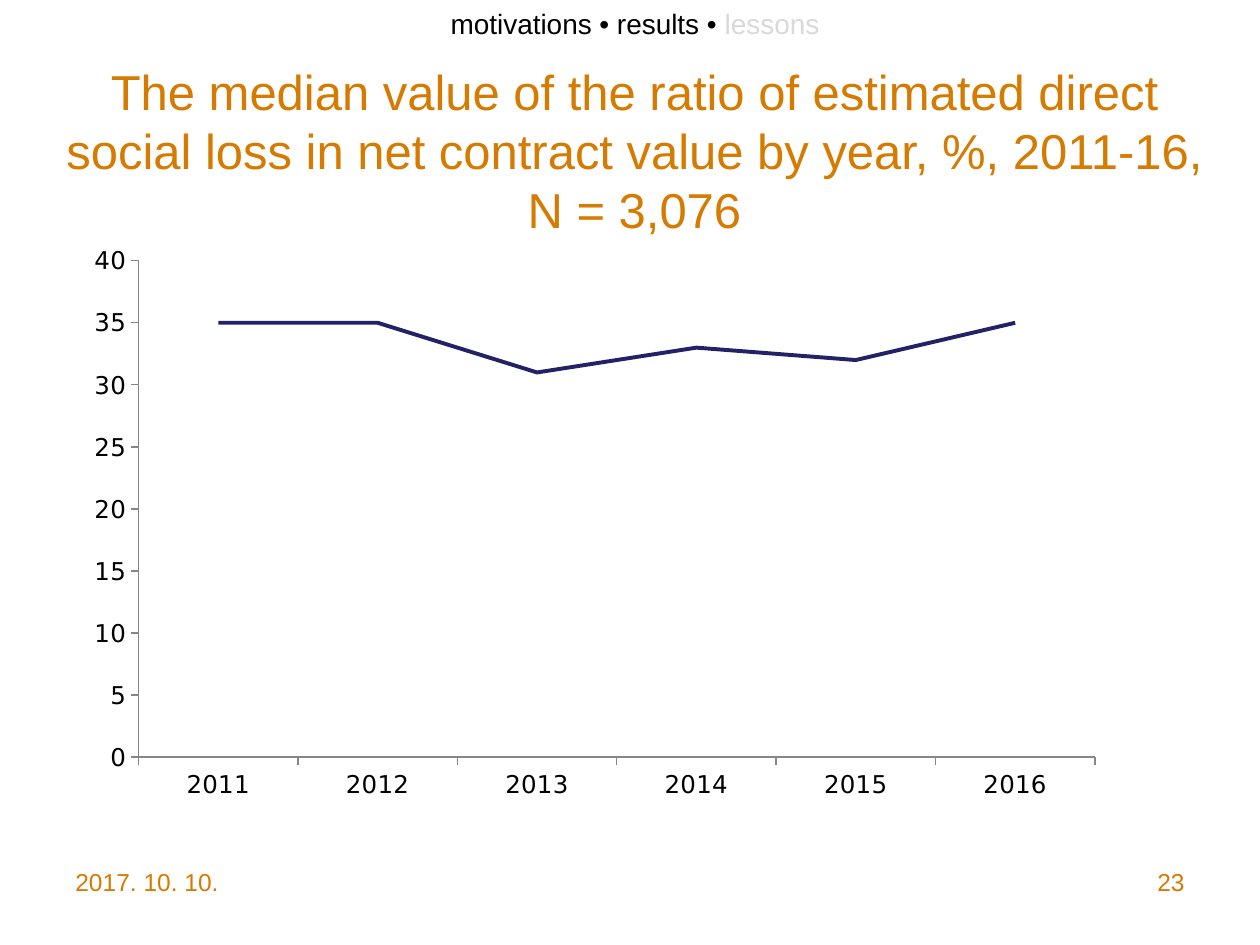
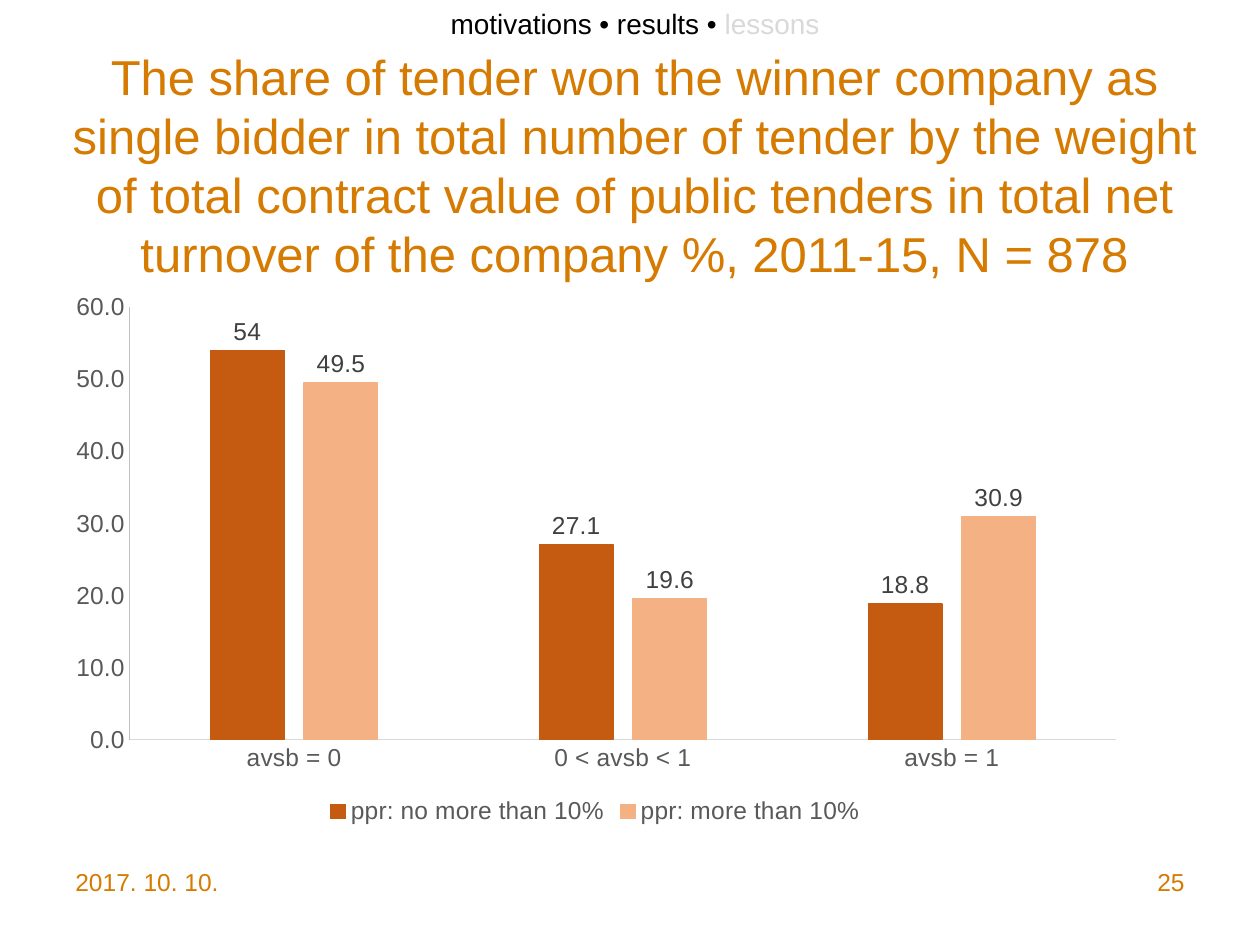
from lxml import etree
from pptx import Presentation
from pptx.chart.data import CategoryChartData
from pptx.dml.color import RGBColor
from pptx.enum.chart import XL_CHART_TYPE, XL_LABEL_POSITION, XL_LEGEND_POSITION, XL_TICK_MARK
from pptx.enum.text import MSO_ANCHOR, MSO_AUTO_SIZE, PP_ALIGN
from pptx.oxml.ns import qn
from pptx.util import Inches, Pt

C = {"title": "D67B01", "text": "000000", "faded": "D9D9D9", "line": "222267",
     "axis": "868686", "value_axis": "BFBFBF", "axis_text": "595959",
     "label": "404040", "dark": "C55A11", "light": "F4B183"}


def add_text(tf, runs, size, align):
    tf.word_wrap = True
    p = tf.paragraphs[0]
    p.alignment = align
    for text, color in runs:
        r = p.add_run()
        r.text = text
        r.font.name = "Arial"
        r.font.size = Pt(size)
        r.font.color.rgb = RGBColor.from_string(C[color])


def style_font(font, name, color):
    font.name = name
    font.size = Pt(14)
    font.bold = False
    font.color.rgb = RGBColor.from_string(C[color])


slides = [
    dict(title="The median value of the ratio of estimated direct social loss in net "
               "contract value by year, %, 2011-16, N = 3,076",
         title_height=1.5, number="23", kind=XL_CHART_TYPE.LINE,
         at=(0.59, 1.87, 8.27, 4.56), plot=(1.1, 2.07, 7.59, 3.94),
         cats=["2011", "2012", "2013", "2014", "2015", "2016"],
         series=[("Series 1", [35, 35, 31, 33, 32, 35])],
         font="DejaVu Sans", color="text", tick=XL_TICK_MARK.OUTSIDE,
         axis_lines=("axis", "axis"), top=40, step=5, fmt="#,##0"),
    dict(title="The share of tender won the winner company as single bidder in total number "
               "of tender by the weight of total contract value of public tenders in total "
               "net turnover of the company %, 2011-15, N = 878",
         title_height=1.73, number="25", kind=XL_CHART_TYPE.COLUMN_CLUSTERED,
         at=(0.43, 2.25, 8.59, 4.34), plot=(1.03, 2.44, 7.83, 3.43),
         cats=["avsb = 0", "0 < avsb < 1", "avsb = 1"],
         series=[("ppr: no more than 10%", [54, 27.1, 18.8]),
                 ("ppr: more than 10%", [49.5, 19.6, 30.9])],
         font="Arial", color="axis_text", tick=XL_TICK_MARK.NONE,
         axis_lines=("faded", "value_axis"), top=60, step=10, fmt="0.0"),
]

prs = Presentation()
prs.slide_width, prs.slide_height = Inches(10), Inches(7.5)

for d in slides:
    s = prs.slides.add_slide(prs.slide_layouts[5])
    title = s.shapes.title
    title.left, title.top = Inches(0.27), Inches(0.44)
    title.width, title.height = Inches(9.53), Inches(d["title_height"])
    title.text_frame.auto_size = MSO_AUTO_SIZE.NONE
    title.text_frame.vertical_anchor = MSO_ANCHOR.MIDDLE
    add_text(title.text_frame, [(d["title"], "title")], 28, PP_ALIGN.CENTER)

    for at, runs, size, align in [
        ((0.5, 6.83, 2.33, 0.52), [("2017. 10. 10.", "title")], 14, PP_ALIGN.LEFT),
        ((7.17, 6.83, 2.33, 0.52), [(d["number"], "title")], 14, PP_ALIGN.RIGHT),
        ((0.04, 0, 10, 0.37), [("motivations • results • ", "text"), ("lessons", "faded")],
         16, PP_ALIGN.CENTER),
    ]:
        sp = s.shapes.add_textbox(*map(Inches, at))
        add_text(sp.text_frame, runs, size, align)

    data = CategoryChartData()
    data.categories = d["cats"]
    for name, values in d["series"]:
        data.add_series(name, values)
    chart = s.shapes.add_chart(d["kind"], *map(Inches, d["at"]), data).chart
    chart.has_title = False
    chart.has_legend = len(d["series"]) > 1
    style_font(chart.font, d["font"], "text")

    for axis, color in zip((chart.category_axis, chart.value_axis), d["axis_lines"]):
        axis.has_major_gridlines = False
        axis.major_tick_mark = d["tick"]
        axis.minor_tick_mark = XL_TICK_MARK.NONE
        axis.format.line.color.rgb = RGBColor.from_string(C[color])
        axis.format.line.width = Pt(0.75)
        style_font(axis.tick_labels.font, d["font"], d["color"])
    axis = chart.value_axis
    axis.minimum_scale, axis.maximum_scale, axis.major_unit = 0, d["top"], d["step"]
    axis.tick_labels.number_format = d["fmt"]
    axis.tick_labels.number_format_is_linked = False

    area = chart.plots[0]._element.getparent()
    for old in area.findall(qn("c:layout")):
        area.remove(old)
    layout = etree.Element(qn("c:layout"))
    area.insert(0, layout)
    manual = etree.SubElement(layout, qn("c:manualLayout"))
    left, top, width, height = d["at"]
    x, y, w, h = d["plot"]
    for tag, value in [("layoutTarget", "inner"), ("xMode", "edge"), ("yMode", "edge"),
                       ("x", (x - left) / width), ("y", (y - top) / height),
                       ("w", w / width), ("h", h / height)]:
        etree.SubElement(manual, qn("c:" + tag)).set("val", str(value))

    plot = chart.plots[0]
    plot.vary_by_categories = False
    if d["kind"] == XL_CHART_TYPE.LINE:
        line = plot.series[0]
        line.smooth = False
        line.format.line.color.rgb = RGBColor.from_string(C["line"])
        line.format.line.width = Pt(2.25)
        continue

    plot.gap_width, plot.overlap = 219, -27
    chart.legend.position = XL_LEGEND_POSITION.BOTTOM
    chart.legend.include_in_layout = False
    style_font(chart.legend.font, "Arial", "axis_text")
    for bars, color, fmt in zip(plot.series, ("dark", "light"), ("General", "0.0")):
        bars.format.fill.solid()
        bars.format.fill.fore_color.rgb = RGBColor.from_string(C[color])
        bars.format.line.color.rgb = RGBColor.from_string(C[color])
        bars.format.line.width = Pt(0.75)
        labels = bars.data_labels
        labels.show_value = True
        labels.position = XL_LABEL_POSITION.OUTSIDE_END
        labels.number_format = fmt
        labels.number_format_is_linked = False
        style_font(labels.font, "Arial", "label")

prs.save("out.pptx")
